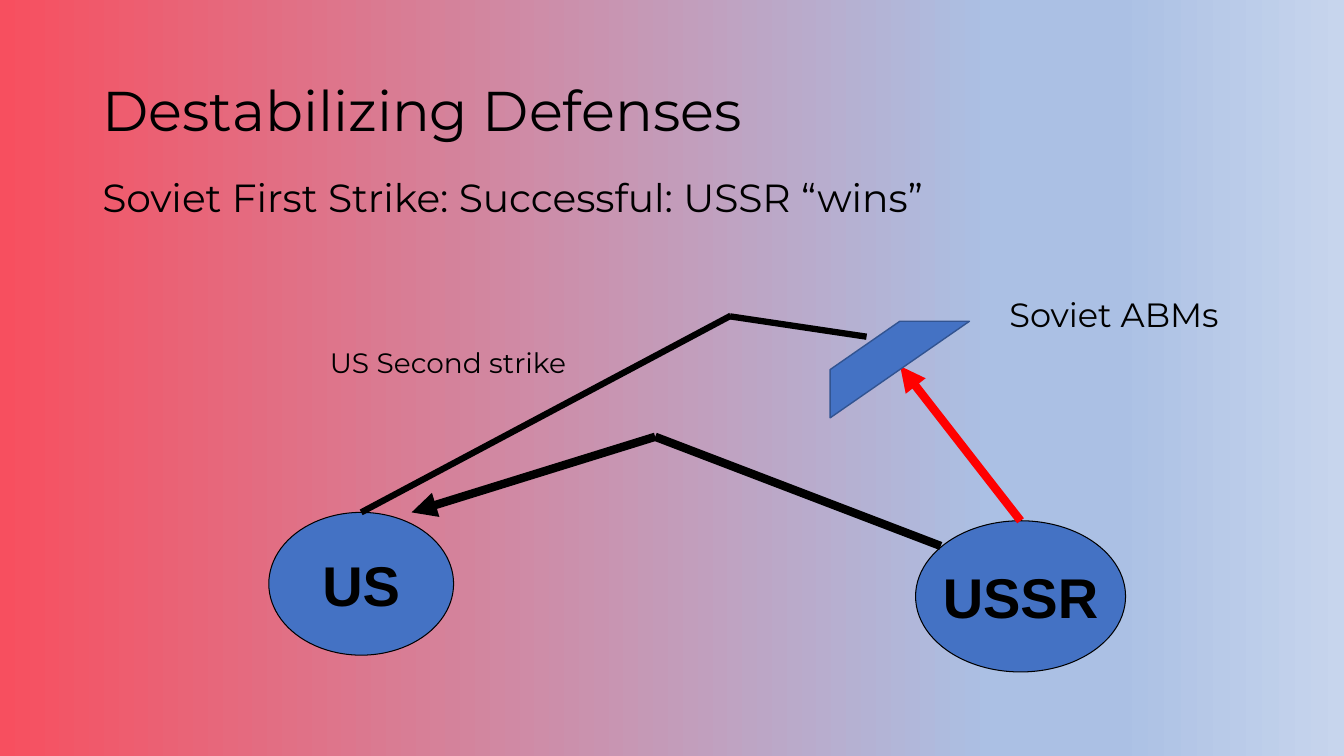
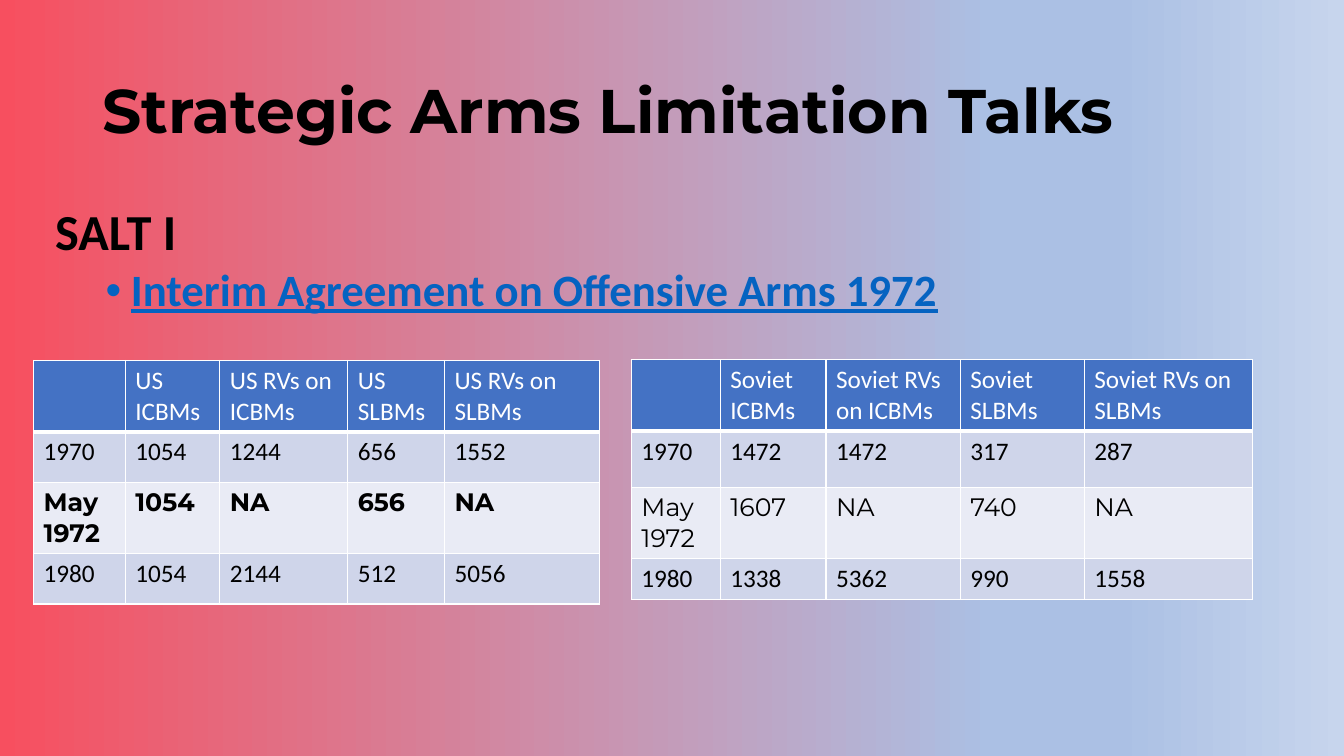
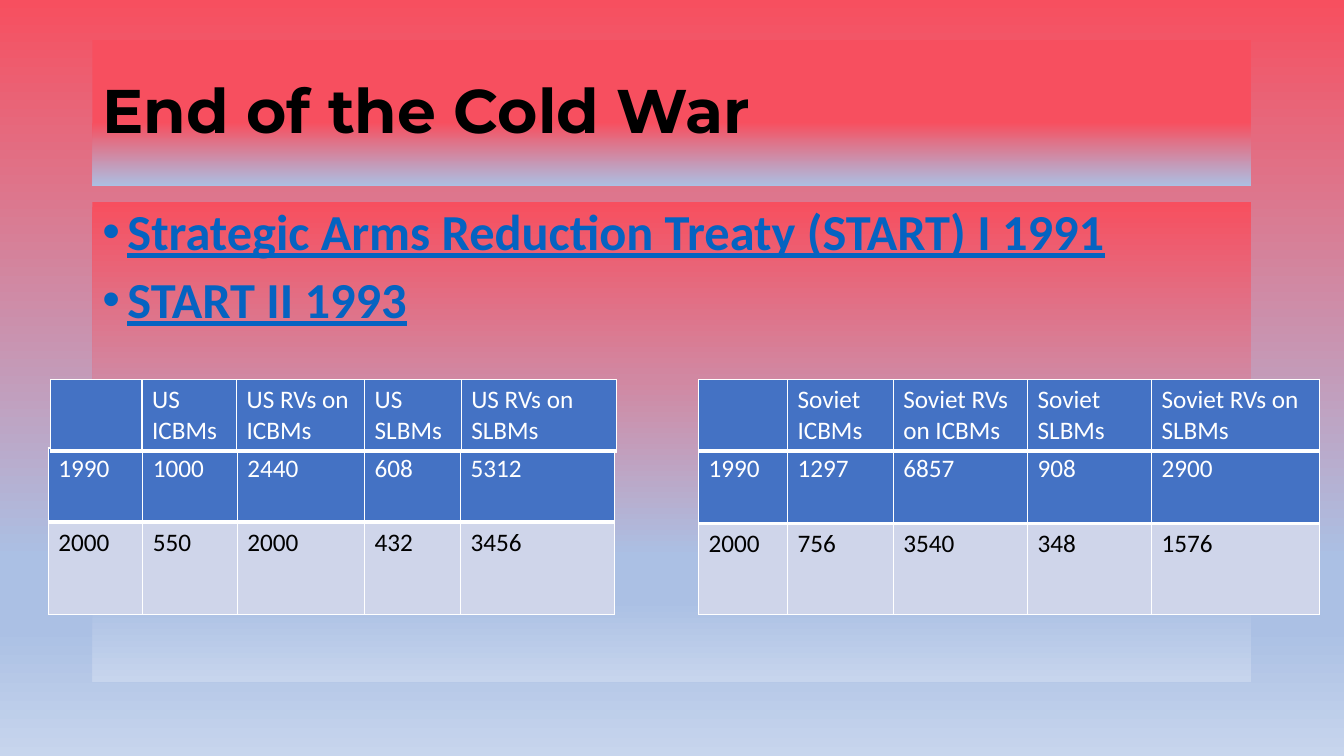
"""Three slides on nuclear strategy and arms control."""
from copy import deepcopy

from lxml import etree
from pptx import Presentation
from pptx import util as u
from pptx.dml.color import RGBColor
from pptx.enum import shapes, text
from pptx.oxml.ns import qn

BLACK, WHITE, RED, LINK = "000000", "FFFFFF", "FF0000", "0563C1"
BLUE, EDGE, BAND, PALE = "4472C4", "325491", "CFD5EA", "E9EBF5"
BACKDROP = [(0, "F74F5F"), (74, "ABC0E4"), (83, "ABC0E4"), (100, "C7D5ED")]
BODY_PANEL = [BACKDROP[0], (37, "D188A2"), *BACKDROP[1:]]
TITLE_PANEL = [(56, "F74F5F"), (100, "ABC0E4"), (100, "C7D5ED")]
RIGHTWARD, DOWNWARD = 0, 270


def paint(fill, colour, angle=DOWNWARD):
    """Fill with one hex colour, or with a gradient given as (percent, hex) stops."""
    if isinstance(colour, str):
        fill.solid()
        fill.fore_color.rgb = RGBColor.from_string(colour)
        return
    fill.gradient()
    fill.gradient_angle = angle
    first = fill.gradient_stops[0]._gs
    for _ in colour[2:]:
        first.addnext(deepcopy(first))
    for stop, (percent, shade) in zip(fill.gradient_stops, colour):
        stop.position = percent / 100
        stop.color.rgb = RGBColor.from_string(shade)


def write(frame, words, size=18, font="Calibri", colour=BLACK, bold=False,
          underline=False, align=None, spacing=None, before=None, bullet_at=None):
    """Add a paragraph to a text frame, using its first paragraph while empty."""
    paragraph = frame.paragraphs[-1]
    if paragraph.runs:
        paragraph = frame.add_paragraph()
    paragraph.alignment = align
    paragraph.line_spacing = spacing
    if before is not None:
        paragraph.space_before = u.Pt(before)
    if bullet_at is not None:
        properties = paragraph._p.get_or_add_pPr()
        properties.set("marL", str(u.Pt(bullet_at)))
        properties.set("indent", str(u.Pt(-18)))
        etree.SubElement(properties, qn("a:buFont")).set("typeface", "Arial")
        etree.SubElement(properties, qn("a:buChar")).set("char", "•")
    run = paragraph.add_run()
    run.text = words
    run.font.name, run.font.size = font, u.Pt(size)
    run.font.bold, run.font.underline = bold, underline
    paint(run.font.fill, colour)


presentation = Presentation()
presentation.slide_width, presentation.slide_height = u.Pt(960), u.Pt(540)

link = dict(bold=True, underline=True, colour=LINK)
pages = [
    ("Destabilizing Defenses", 40, False, RIGHTWARD, (66, 124, 828, 362),
     [("Soviet First Strike: Successful: USSR “wins”", dict(size=28, font="Montserrat", before=10))]),
    ("Strategic Arms Limitation Talks", 44, True, RIGHTWARD, (32.4, 144, 919, 343),
     [("SALT I", dict(size=36, bold=True, before=10)),
      ("Interim Agreement on Offensive Arms 1972", dict(size=32, before=5, bullet_at=54, **link))]),
    ("End of the Cold War", 44, True, DOWNWARD, (66, 144, 828, 343),
     [("Strategic Arms Reduction Treaty (START) I 1991", dict(size=36, before=10, bullet_at=18, **link)),
      ("START II 1993", dict(size=36, before=10, bullet_at=18, **link))]),
]
slides = []
for heading, size, bold, angle, place, lines in pages:
    slide = presentation.slides.add_slide(presentation.slide_layouts[6])
    slides.append(slide)
    paint(slide.background.fill, BACKDROP, angle)
    title = slide.shapes.add_textbox(u.Pt(66), u.Pt(28.8), u.Pt(828), u.Pt(104.4))
    title.text_frame.word_wrap = True
    title.text_frame.vertical_anchor = text.MSO_ANCHOR.MIDDLE
    write(title.text_frame, heading, size=size, font="Montserrat", bold=bold, spacing=0.9)
    body = slide.shapes.add_textbox(*map(u.Pt, place))
    body.text_frame.word_wrap = True
    for words, style in lines:
        write(body.text_frame, words, spacing=0.9, **style)
    if angle == DOWNWARD:
        paint(title.fill, TITLE_PANEL)
        paint(body.fill, BODY_PANEL)

strike, salt, start = slides
for words, size, place in [("Soviet ABMs", 24, (714, 204, 180, 40)),
                           ("US Second strike", 20, (228.5, 240.5, 200, 36))]:
    label = strike.shapes.add_textbox(*map(u.Pt, place))
    label.text_frame.word_wrap = True
    label.text_frame.vertical_anchor = text.MSO_ANCHOR.MIDDLE
    write(label.text_frame, words, size=size, font="Montserrat")

countries = {}
for name, place in [("US", (192, 366, 132, 102)), ("USSR", (654, 372, 150, 108))]:
    country = strike.shapes.add_shape(shapes.MSO_SHAPE.OVAL, *map(u.Pt, place))
    country.shadow.inherit = False
    paint(country.fill, BLUE)
    paint(country.line.fill, BLACK)
    country.line.width = u.Pt(0.75)
    country.text_frame.word_wrap = False
    country.text_frame.vertical_anchor = text.MSO_ANCHOR.MIDDLE
    write(country.text_frame, name, size=40, font="Arial", bold=True, align=text.PP_ALIGN.CENTER)
    countries[name] = country

flights = [
    ((672, 390, 468, 312), BLACK, 6, False, None),
    ((468, 312, 294, 366), BLACK, 6, True, None),
    ((258, 366, 522, 225.5), BLACK, 4.5, False, "US"),
    ((521.5, 226, 619, 240.5), BLACK, 4.5, False, None),
    ((729, 372, 643, 261.5), RED, 6, True, "USSR"),
]
for ends, colour, width, arrow, origin in flights:
    flight = strike.shapes.add_connector(shapes.MSO_CONNECTOR.STRAIGHT, *map(u.Pt, ends))
    if origin:
        flight.begin_connect(countries[origin], 0)
    paint(flight.line.fill, colour)
    flight.line.width = u.Pt(width)
    properties = flight._element.spPr
    if arrow:
        etree.SubElement(properties.find(qn("a:ln")), qn("a:tailEnd")).set("type", "triangle")
    etree.SubElement(properties, qn("a:effectLst"))

shield = strike.shapes.add_shape(shapes.MSO_SHAPE.DIAGONAL_STRIPE,
                                 u.Pt(593), u.Pt(229.5), u.Pt(99.5), u.Pt(69))
shield.shadow.inherit = False
paint(shield.fill, BLUE)
paint(shield.line.fill, EDGE)
shield.line.width = u.Pt(1)

us_columns = [65.5, 67.5, 91.5, 69, 111]
us_data_columns = [67.5, 67.5, 91, 68.5, 110]
soviet_columns = [63.5, 75.5, 96, 88.5, 120]
us_header = ["", "US ICBMs", "US RVs on ICBMs", "US SLBMs", "US RVs on SLBMs"]
soviet_header = ["", "Soviet ICBMs", "Soviet RVs on ICBMs", "Soviet SLBMs", "Soviet RVs on SLBMs"]
head = (BLUE, dict(colour=WHITE))
plain = (BAND, {})
treaty = (PALE, dict(font="Montserrat"))
treaty_bold = (PALE, dict(font="Montserrat", bold=True))

tables = [
    (salt, 24, 257.5, us_columns, [
        (51, head, us_header),
        (36, plain, ["1970", "1054", "1244", "656", "1552"]),
        (51, treaty_bold, ["May 1972", "1054", "NA", "656", "NA"]),
        (36, plain, ["1980", "1054", "2144", "512", "5056"])]),
    (salt, 451, 257, soviet_columns, [
        (51, head, soviet_header),
        (40, plain, ["1970", "1472", "1472", "317", "287"]),
        (51, treaty, ["May 1972", "1607", "NA", "740", "NA"]),
        (29, plain, ["1980", "1338", "5362", "990", "1558"])]),
    (start, 34.5, 320, us_data_columns, [
        (53, head, ["1990", "1000", "2440", "608", "5312"]),
        (66, plain, ["2000", "550", "2000", "432", "3456"])]),
    (start, 499, 320, soviet_columns, [
        (54, head, ["1990", "1297", "6857", "908", "2900"]),
        (65, plain, ["2000", "756", "3540", "348", "1576"])]),
    (start, 499, 271, soviet_columns, [(51, head, soviet_header)]),
    (start, 36, 271, us_columns, [(51, head, us_header)]),
]
for slide, left, top, columns, rows in tables:
    height = sum(row[0] for row in rows)
    table = slide.shapes.add_table(len(rows), len(columns), u.Pt(left), u.Pt(top),
                                   u.Pt(sum(columns)), u.Pt(height)).table
    table.first_row = table.horz_banding = False
    for column, width in zip(table.columns, columns):
        column.width = u.Pt(width)
    for row, (height, (shade, style), values) in zip(table.rows, rows):
        row.height = u.Pt(height)
        for cell, value in zip(row.cells, values):
            if value:
                write(cell.text_frame, value, **style)
            properties = cell._tc.get_or_add_tcPr()
            for side in ("lnL", "lnR", "lnT", "lnB"):
                weight = 3 if side == "lnB" and shade == BLUE else 1
                border = etree.SubElement(properties, qn(f"a:{side}"), w=str(u.Pt(weight)))
                solid = etree.SubElement(border, qn("a:solidFill"))
                etree.SubElement(solid, qn("a:srgbClr"), val=WHITE)
            paint(cell.fill, shade)

presentation.save("out.pptx")
